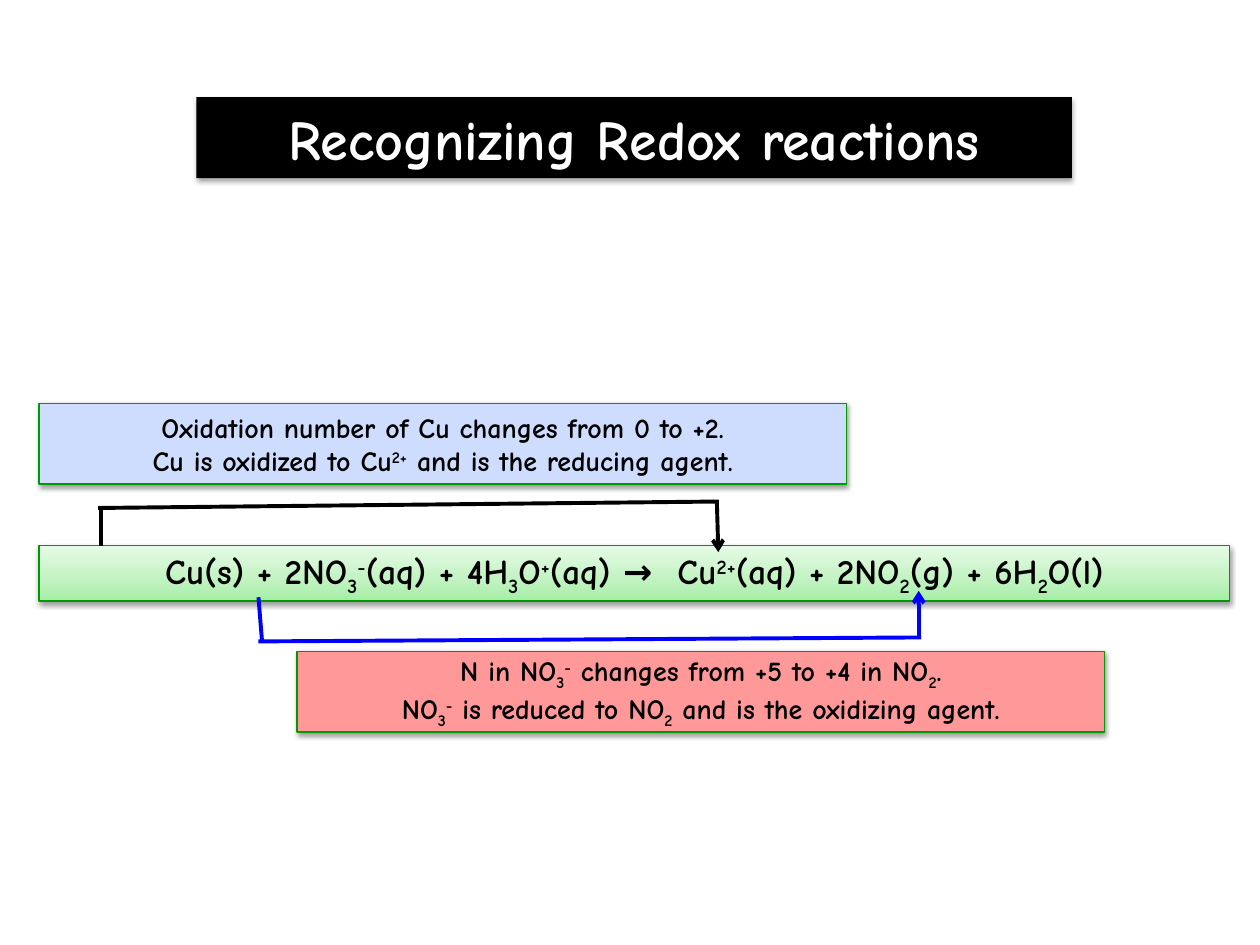
from copy import deepcopy

from lxml.etree import SubElement
from pptx import Presentation
from pptx.dml.color import RGBColor
from pptx.enum.shapes import MSO_CONNECTOR, MSO_SHAPE
from pptx.enum.text import MSO_ANCHOR, MSO_AUTO_SIZE, PP_ALIGN
from pptx.oxml.ns import qn
from pptx.util import Cm, Pt

BLACK = RGBColor(0x00, 0x00, 0x00)
WHITE = RGBColor(0xFF, 0xFF, 0xFF)
BLUE = RGBColor(0x00, 0x00, 0xFF)
BORDER_GREEN = RGBColor(0x00, 0x9A, 0x00)
PALE_BLUE = RGBColor(0xCE, 0xDD, 0xFE)
PALE_RED = RGBColor(0xFF, 0x99, 0x99)
GREEN_STOPS = [
    (0, RGBColor(0xA4, 0xEE, 0xA4)),
    (0.35, RGBColor(0xC0, 0xF2, 0xC0)),
    (1, RGBColor(0xE6, 0xFB, 0xE6)),
]
BASELINES = {"_": "-25000", "^": "30000"}


class RedoxSlide:
    font = "Comic Neue"

    def __init__(self, prs):
        self.s = prs.slides.add_slide(prs.slide_layouts[5])

    def shadow(self, sp, dist, alpha):
        sp.shadow.inherit = False
        effects = sp._element.spPr.find(qn("a:effectLst"))
        outer = SubElement(effects, qn("a:outerShdw"), blurRad=str(Pt(3.1)),
                           dist=str(Pt(dist)), dir="5400000", rotWithShape="0")
        clr = SubElement(outer, qn("a:srgbClr"), val=str(BLACK))
        SubElement(clr, qn("a:alpha"), val=str(alpha * 1000))

    def gradient(self, sp, stops):
        fill = sp.fill
        fill.gradient()
        fill.gradient_angle = 90
        gs_list = sp._element.spPr.find(qn("a:gradFill")).find(qn("a:gsLst"))
        gs_list.append(deepcopy(gs_list[0]))
        for stop, (position, color) in zip(fill.gradient_stops, stops):
            stop.position = position
            stop.color.rgb = color

    def text(self, sp, lines, size, color):
        tf = sp.text_frame
        tf.word_wrap = True
        tf.auto_size = MSO_AUTO_SIZE.NONE
        tf.vertical_anchor = MSO_ANCHOR.MIDDLE
        for i, line in enumerate(lines):
            p = tf.add_paragraph() if i else tf.paragraphs[0]
            p.alignment = PP_ALIGN.CENTER
            p.font.name = self.font
            p.font.size = Pt(size)
            p.font.bold = True
            p.font.color.rgb = color
            for part in line.split("|"):
                r = p.add_run()
                r.text = part.lstrip("_^")
                if part[0] in BASELINES:
                    r.font._element.set("baseline", BASELINES[part[0]])

    def title(self, text, left, top, width, height):
        sp = self.s.shapes.title
        sp.left, sp.top, sp.width, sp.height = map(Cm, (left, top, width, height))
        sp.fill.solid()
        sp.fill.fore_color.rgb = BLACK
        effects = SubElement(sp._element.spPr, qn("a:effectLst"))
        outer = SubElement(effects, qn("a:outerShdw"), blurRad=str(Pt(3.1)),
                           dist=str(Pt(1.8)), dir="5400000", rotWithShape="0")
        clr = SubElement(outer, qn("a:srgbClr"), val=str(BLACK))
        SubElement(clr, qn("a:alpha"), val="35000")
        self.text(sp, [text], 32, WHITE)

    def box(self, lines, left, top, width, height, fill, size):
        sp = self.s.shapes.add_shape(
            MSO_SHAPE.RECTANGLE, *map(Cm, (left, top, width, height)))
        if isinstance(fill, list):
            self.gradient(sp, fill)
        else:
            sp.fill.solid()
            sp.fill.fore_color.rgb = fill
        sp.line.color.rgb = BORDER_GREEN
        sp.line.width = Pt(0.75)
        self.shadow(sp, 1.6, 38)
        self.text(sp, lines, size, BLACK)

    def bracket(self, segments, color):
        group = self.s.shapes.add_group_shape()
        for segment in segments:
            line = group.shapes.add_connector(
                MSO_CONNECTOR.STRAIGHT, *map(Cm, segment))
            line.line.color.rgb = color
            line.line.width = Pt(2.25)
            SubElement(line._element.spPr, qn("a:effectLst"))
        SubElement(line.line._get_or_add_ln(), qn("a:tailEnd"), type="arrow")


def main():
    prs = Presentation()
    prs.slide_width, prs.slide_height = Cm(25.4), Cm(19.05)
    s = RedoxSlide(prs)
    s.title("Recognizing Redox reactions", 3.96, 1.96, 17.65, 1.63)
    s.box(["Cu(s) + 2NO|_3|^-|(aq) + 4H|_3|O|^+|(aq) →  Cu|^2+|(aq) + 2NO|_2"
           "|(g) + 6H|_2|O(l)"], 0.79, 11, 24, 1.12, GREEN_STOPS, 20)
    s.box(["Oxidation number of Cu changes from 0 to +2.",
           "Cu is oxidized to Cu|^2+| and is the reducing agent."],
          0.79, 8.13, 16.28, 1.63, PALE_BLUE, 16)
    s.bracket([(2.03, 10.21, 2.03, 11), (1.98, 10.24, 14.48, 10.11),
               (14.45, 10.08, 14.48, 11.13)], BLACK)
    s.bracket([(5.28, 12.9, 5.21, 12.04), (5.21, 12.93, 18.57, 12.85),
               (18.52, 12.88, 18.52, 11.91)], BLUE)
    s.box(["N in NO|_3|^-| changes from +5 to +4 in NO|_2|.",
           "NO|_3|^-| is reduced to NO|_2| and is the oxidizing agent."],
          5.99, 13.13, 16.28, 1.63, PALE_RED, 16)
    prs.save("out.pptx")


if __name__ == "__main__":
    main()
